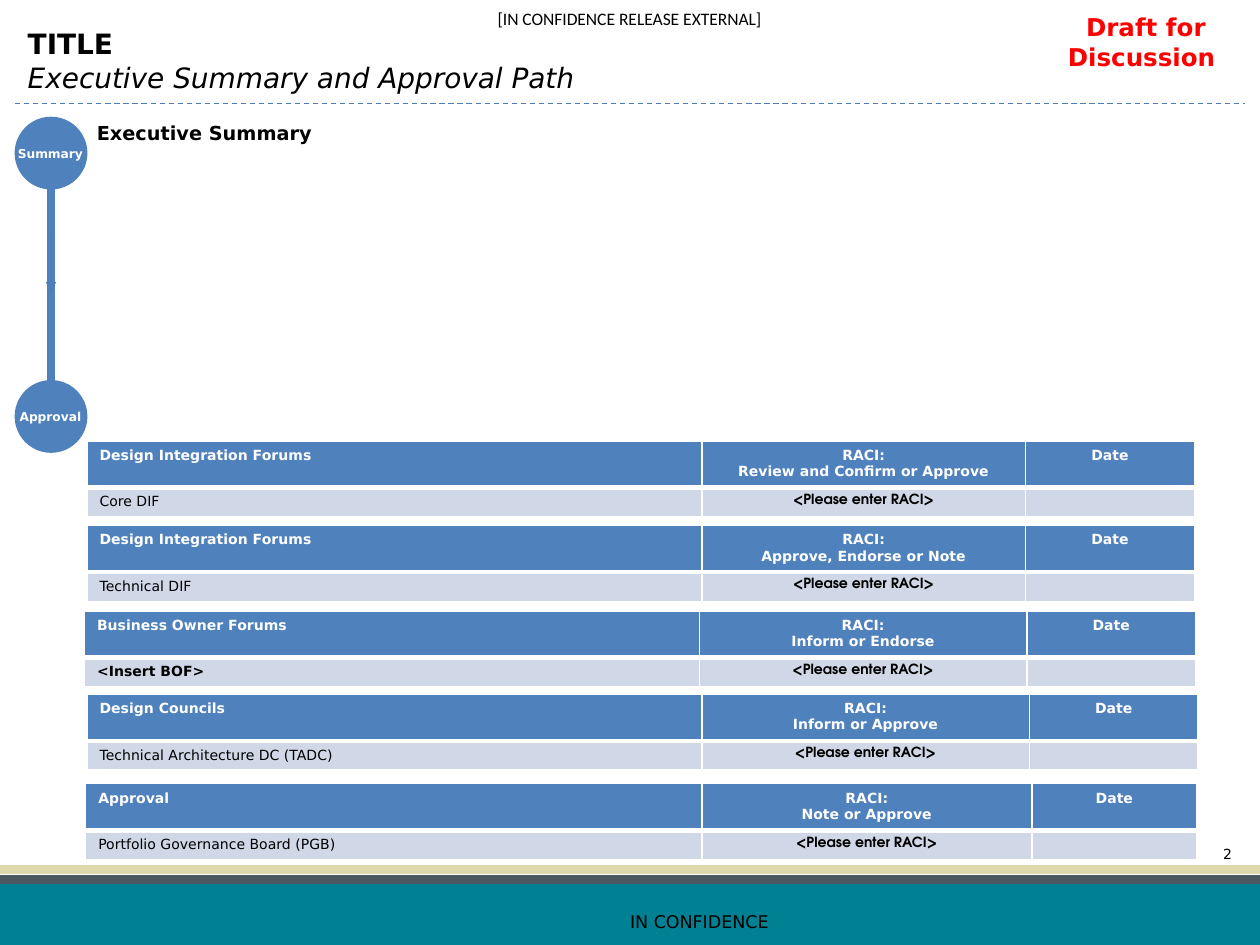
from dataclasses import dataclass

from lxml import etree
from pptx import Presentation
from pptx.dml.color import RGBColor
from pptx.enum.dml import MSO_LINE
from pptx.enum.shapes import MSO_CONNECTOR, MSO_SHAPE
from pptx.enum.text import MSO_ANCHOR, MSO_AUTO_SIZE, PP_ALIGN
from pptx.oxml.ns import qn
from pptx.util import Inches, Pt

LEFT, CENTER = PP_ALIGN.LEFT, PP_ALIGN.CENTER
TOP, MIDDLE = MSO_ANCHOR.TOP, MSO_ANCHOR.MIDDLE
STRAIGHT, DASH = MSO_CONNECTOR.STRAIGHT, MSO_LINE.DASH
RECTANGLE, OVAL = MSO_SHAPE.RECTANGLE, MSO_SHAPE.OVAL
NO_AUTOFIT = MSO_AUTO_SIZE.NONE

BLACK = RGBColor(0x00, 0x00, 0x00)
WHITE = RGBColor(0xFF, 0xFF, 0xFF)
RED = RGBColor(0xFF, 0x00, 0x00)
BLUE = RGBColor(0x4F, 0x81, 0xBD)
LINE_BLUE = RGBColor(0x4B, 0x7E, 0xBC)
PALE_BLUE = RGBColor(0xD0, 0xD8, 0xE8)
TEAL = RGBColor(0x00, 0x80, 0x93)
SLATE = RGBColor(0x4C, 0x57, 0x5F)
SAND = RGBColor(0xDF, 0xD8, 0xAD)

BODY_FONT, RACI_FONT, MARKING_FONT = "DejaVu Sans", "TeX Gyre Adventor", "Calibri"
SLIDE_WIDTH, SLIDE_HEIGHT = Inches(10), Inches(7.5)
COLUMN, ROW = SLIDE_WIDTH / 100, SLIDE_HEIGHT / 75
HEADER_ROWS, ENTRY_ROWS = 3.7, 2.3

FORUMS = [
    ((6.9, 35), (48.8, 25.7, 13.4), "Design Integration Forums",
     "Review and Confirm or Approve", "Core DIF", False),
    ((6.9, 41.7), (48.8, 25.7, 13.4), "Design Integration Forums",
     "Approve, Endorse or Note", "Technical DIF", False),
    ((6.7, 48.5), (48.8, 26, 13.4), "Business Owner Forums",
     "Inform or Endorse", "<Insert BOF>", True),
    ((6.9, 55.1), (48.8, 26, 13.4), "Design Councils",
     "Inform or Approve", "Technical Architecture DC (TADC)", False),
    ((6.8, 62.2), (48.9, 26.2, 13.1), "Approval",
     "Note or Approve", "Portfolio Governance Board (PGB)", False),
]


@dataclass
class Box:
    """A region measured in grid columns and rows."""

    left: float
    top: float
    width: float
    height: float

    def inner(self, left, top, width, height):
        """Return a box offset from this one's corner."""
        return Box(self.left + left, self.top + top, width, height)

    def lengths(self):
        """Return left, top, width and height as slide lengths."""
        return (round(self.left * COLUMN), round(self.top * ROW),
                round(self.width * COLUMN), round(self.height * ROW))


def format_paragraph(paragraph, size, color=BLACK, bold=False, italic=False,
                     font=BODY_FONT, align=LEFT):
    """Set the alignment and font of a paragraph."""
    paragraph.alignment = align
    paragraph.font.name = font
    paragraph.font.size = Pt(size)
    paragraph.font.bold = bold
    paragraph.font.italic = italic
    paragraph.font.color.rgb = color


def add_text(slide, box, text, size, **style):
    """Add a wrapping text box with one formatted paragraph."""
    frame = slide.shapes.add_textbox(*box.lengths()).text_frame
    frame.word_wrap = True
    frame.text = text
    format_paragraph(frame.paragraphs[0], size, **style)
    return frame


def add_line(slide, box, color, width):
    """Add a shadowless straight line across a box."""
    left, top, across, down = box.lengths()
    line = slide.shapes.add_connector(STRAIGHT, left, top, left + across, top + down)
    line.line.color.rgb = color
    line.line.width = Pt(width)
    properties = line._element.spPr
    etree.SubElement(properties, qn("a:effectLst"))
    return line


def add_solid(slide, kind, box, color):
    """Add a flat filled shape without outline."""
    shape = slide.shapes.add_shape(kind, *box.lengths())
    shape.shadow.inherit = False
    shape.fill.solid()
    shape.fill.fore_color.rgb = color
    shape.line.fill.background()
    return shape


def draw_footer(slide, box):
    """Draw the footer band, its stripes, marking and page number."""
    add_solid(slide, RECTANGLE, box.inner(0, 0.8, box.width, box.height - 0.8), TEAL)
    add_line(slide, box.inner(0, 0.8, box.width, 0), SLATE, 5)
    add_line(slide, box.inner(0, 0, box.width, 0), SAND, 5)
    add_text(slide, box.inner(96.1, -2.4, 5.1, 2.4), "2", 8)
    add_text(slide, box.inner(29.5, 2.8, 52, 2.7), "IN CONFIDENCE", 10, align=CENTER)


def draw_header(slide, box):
    """Draw the release marking, title, draft stamp and dashed rule."""
    marking = add_text(slide, box.inner(37.7, 0, 24.5, 2.9),
                       "[IN CONFIDENCE RELEASE EXTERNAL]", 10,
                       font=MARKING_FONT, align=CENTER)
    marking.vertical_anchor = MIDDLE
    marking.margin_left = marking.margin_right = 0
    marking.margin_top = marking.margin_bottom = 0

    title = slide.shapes.title
    title.left, title.top, title.width, title.height = box.inner(1.2, 1.6, 96.9, 6.4).lengths()
    frame = title.text_frame
    frame.text = "TITLE\nExecutive Summary and Approval Path"
    frame.auto_size = NO_AUTOFIT
    frame.vertical_anchor = TOP
    heading, subheading = frame.paragraphs
    format_paragraph(heading, 16, bold=True)
    format_paragraph(subheading, 16, italic=True)

    add_text(slide, box.inner(82.3, 0.5, 17.3, 5.7), "Draft for Discussion ", 14,
             color=RED, bold=True, align=CENTER)
    rule = add_line(slide, box.inner(1.2, box.height, 97.6, 0), LINE_BLUE, 0.75)
    rule.line.dash_style = DASH


def draw_path(slide, box):
    """Draw the path from the summary circle down to the approval circle."""
    diameter = box.width
    middle = diameter / 2
    add_line(slide, box.inner(middle, 1.2, 0, box.height - diameter - 1.2), BLUE, 4.5)
    for top, label in ((0, "Summary"), (box.height - diameter, "Approval")):
        circle = add_solid(slide, OVAL, box.inner(0, top, diameter, diameter), BLUE)
        circle.line.color.rgb = BLUE
        circle.line.width = Pt(2)
        add_text(slide, box.inner(middle - 4.4, top + 1.7, 8.7, 2.2), label, 7,
                 color=WHITE, bold=True, align=CENTER)
    arrow = add_line(slide, box.inner(middle, 9.1, 0, 4.7), LINE_BLUE, 0.75)
    outline = arrow.line._get_or_add_ln()
    etree.SubElement(outline, qn("a:tailEnd"), type="triangle")


def format_cell(cell, text, fill, top_border, bottom_border, **style):
    """Fill one table cell with white borders and formatted text."""
    properties = cell._tc.get_or_add_tcPr()
    for side, width in (("L", 1), ("R", 1), ("T", top_border), ("B", bottom_border)):
        border = etree.SubElement(properties, qn(f"a:ln{side}"), w=str(Pt(width)))
        solid = etree.SubElement(border, qn("a:solidFill"))
        etree.SubElement(solid, qn("a:srgbClr"), val=str(WHITE))
    cell.fill.solid()
    cell.fill.fore_color.rgb = fill
    cell.text = text
    for paragraph in cell.text_frame.paragraphs:
        format_paragraph(paragraph, 8, **style)
        if not text:
            etree.SubElement(paragraph._p, qn("a:endParaRPr"), sz="800")


def draw_forum(slide, box, columns, forum, role, entry, entry_bold):
    """Draw one approval table with a header row and an entry row."""
    table = slide.shapes.add_table(2, len(columns), *box.lengths()).table
    table.horz_banding = False
    for column, width in zip(table.columns, columns):
        column.width = round(width * COLUMN)
    for row, height in zip(table.rows, (HEADER_ROWS, ENTRY_ROWS)):
        row.height = round(height * ROW)
    headers = (forum, f"RACI:\n{role}", "Date")
    entries = (entry, "<Please enter RACI>", "")
    for index, (header, value) in enumerate(zip(headers, entries)):
        align = CENTER if index else LEFT
        format_cell(table.cell(0, index), header, BLUE, 1, 3,
                    color=WHITE, bold=True, align=align)
        format_cell(table.cell(1, index), value, PALE_BLUE, 3, 1,
                    bold=entry_bold or index == 1, align=align,
                    font=RACI_FONT if index == 1 else BODY_FONT)


def main():
    """Build and save the approval path slide."""
    presentation = Presentation()
    presentation.slide_width, presentation.slide_height = SLIDE_WIDTH, SLIDE_HEIGHT
    slide = presentation.slides.add_slide(presentation.slide_layouts[5])
    draw_footer(slide, Box(0, 69, 100, 6))
    draw_header(slide, Box(0, 0, 100, 8.2))
    add_text(slide, Box(6.7, 9.1, 92.9, 25.1), "Executive Summary", 11, bold=True)
    draw_path(slide, Box(1.3, 9.4, 5.5, 26.4))
    for (left, top), columns, *texts in FORUMS:
        box = Box(left, top, sum(columns), HEADER_ROWS + ENTRY_ROWS)
        draw_forum(slide, box, columns, *texts)
    presentation.save("out.pptx")


if __name__ == "__main__":
    main()
